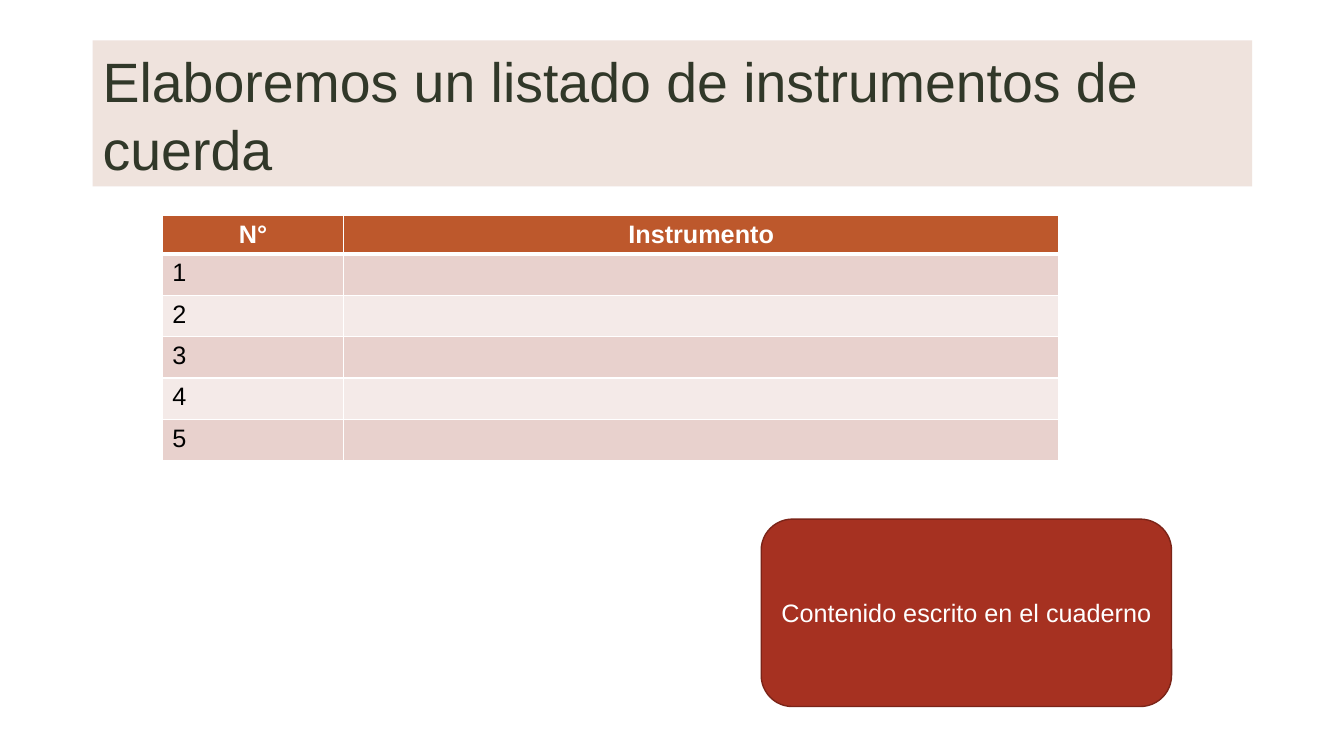
from lxml import etree
from pptx import Presentation
from pptx import util as u
from pptx.dml.color import RGBColor
from pptx.enum import shapes, text
from pptx.oxml import ns

WHITE = RGBColor(0xFF, 0xFF, 0xFF)
BLACK = RGBColor(0, 0, 0)
OLIVE = RGBColor(0x31, 0x38, 0x29)
SAND = RGBColor(0xEB, 0xDC, 0xD5)
RUST = RGBColor(0xBD, 0x58, 0x2C)
ROSE = RGBColor(0xE8, 0xD1, 0xCD)
PALE = RGBColor(0xF4, 0xEA, 0xE8)
BRICK = RGBColor(0xA6, 0x31, 0x21)
WINE = RGBColor(0x7B, 0x24, 0x18)


class Page:
    """Style and drawing methods for the current slide."""
    base = {"name": "Arial", "size": u.Pt(18), "bold": False}

    def __init__(self, deck):
        self.slide = deck.slides.add_slide(deck.slide_layouts[6])

    def label(self, frame, words, align, color, **form):
        para = frame.paragraphs[0]
        para.alignment = align
        run = para.add_run()
        run.text = words
        for key, value in {**self.base, **form}.items():
            setattr(run.font, key, value)
        run.font.color.rgb = color
        return para

    def block(self, kind, area, fill, line=None, alpha=None):
        box = self.slide.shapes.add_shape(kind, *map(u.Inches, area))
        box.shadow.inherit = False
        box.fill.solid()
        box.fill.fore_color.rgb = fill
        if alpha:
            tone = box.element.spPr.find(ns.qn("a:solidFill"))[0]
            etree.SubElement(tone, ns.qn("a:alpha"), val=str(alpha * 1000))
        if line:
            box.line.color.rgb = line
            box.line.width = u.Pt(1)
        else:
            box.line.fill.background()
        box.text_frame.word_wrap = True
        box.text_frame.vertical_anchor = text.MSO_ANCHOR.MIDDLE
        return box

    def edge(self, cell, **sides):
        props = cell._tc.get_or_add_tcPr()
        for spot, (side, width) in enumerate(sides.items()):
            line = etree.Element(ns.qn("a:" + side), w=str(int(u.Pt(width))))
            fill = etree.SubElement(line, ns.qn("a:solidFill"))
            etree.SubElement(fill, ns.qn("a:srgbClr"), val=str(WHITE))
            props.insert(spot, line)

    def grid(self, area, widths, heights, rows):
        table = self.slide.shapes.add_table(
            len(rows), len(widths), *map(u.Inches, area)).table
        for col, width in zip(table.columns, widths):
            col.width = u.Inches(width)
        for i, (row, height) in enumerate(zip(table.rows, heights)):
            row.height = u.Inches(height)
            head = i == 0
            fill = RUST if head else (PALE, ROSE)[i % 2]
            align = text.PP_ALIGN.CENTER if head else text.PP_ALIGN.LEFT
            for cell, words in zip(row.cells, rows[i]):
                cell.fill.solid()
                cell.fill.fore_color.rgb = fill
                self.edge(cell, lnL=1, lnR=1, lnT=3 if i == 1 else 1,
                          lnB=3 if head else 1)
                if words:
                    self.label(cell.text_frame, words, align,
                               WHITE if head else BLACK, bold=head)


def main():
    deck = Presentation()
    deck.slide_width, deck.slide_height = u.Inches(13.33), u.Inches(7.5)
    page = Page(deck)

    # Title band
    title = page.block(shapes.MSO_SHAPE.RECTANGLE, (0.92, 0.4, 11.5, 1.45),
                       SAND, alpha=80)
    para = page.label(title.text_frame,
                      "Elaboremos un listado de instrumentos de cuerda",
                      text.PP_ALIGN.LEFT, OLIVE, size=u.Pt(39.6))
    para.line_spacing = 1.03

    # Numbered list of instruments
    rows = [("N°", "Instrumento")] + [(str(n), "") for n in range(1, 6)]
    page.grid((1.61, 2.14, 8.89, 2.41), (1.8, 7.09), [0.36] + [0.41] * 5, rows)

    # Notebook note
    note = page.block(shapes.MSO_SHAPE.ROUNDED_RECTANGLE,
                      (7.55, 5.15, 4.07, 1.86), BRICK, WINE)
    page.label(note.text_frame, "Contenido escrito en el cuaderno",
               text.PP_ALIGN.CENTER, WHITE)

    deck.save("out.pptx")


if __name__ == "__main__":
    main()
